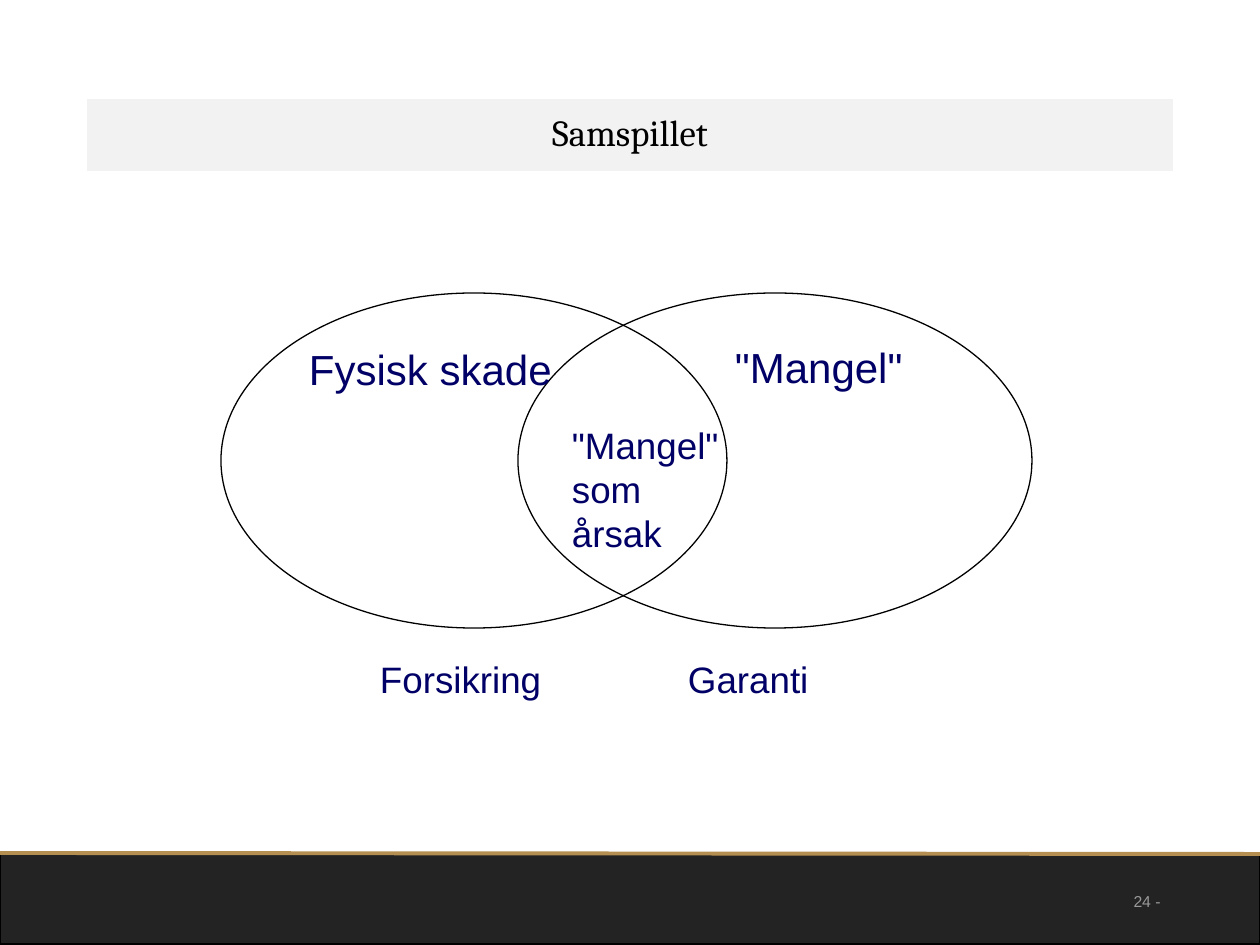
from pptx import Presentation
from pptx.dml.color import RGBColor
from pptx.enum.shapes import MSO_CONNECTOR as Connector, MSO_SHAPE as Shape
from pptx.enum.text import MSO_ANCHOR as Anchor, MSO_AUTO_SIZE as AutoSize, PP_ALIGN as Align
from pptx.util import Emu, Pt
from lxml.etree import SubElement
from pptx.oxml.ns import qn

PX = 7257.14  # EMU per px, 126 px to the inch

# Content: places are left, top, width, height in px
TITLE = ("Samspillet", (87, 99, 1086, 72))
PAGE_NUMBER = ("24 -", (890, 876, 283, 50))
FOOTER_BAND = (0, 853, 1260, 91)
FOOTER_RULE = (-1, 853, 1260, 854)  # from x, y to x, y
CIRCLES = [(221, 293, 506, 335), (518, 293, 514, 335)]
LABELS = [  # lines, size, place
    (["Forsikring"], 21, (371, 652, 181, 54)),
    (["Garanti"], 21, (679, 652, 141, 54)),
    (["Fysisk skade"], 24, (300, 339, 265, 60)),
    (['"Mangel"'], 24, (726, 337, 189, 111)),
    (['"Mangel"', "som", "årsak"], 21, (563, 418, 166, 144)),
]


def px(*lengths):
    return [Emu(round(length * PX)) for length in lengths]


def color(hex_string):
    return RGBColor.from_string(hex_string)


def write(paragraph, text, size, font, ink, align=Align.LEFT):
    paragraph.alignment = align
    run = paragraph.add_run()
    run.text = text
    run.font.size = Pt(size)
    run.font.name = font
    run.font.color.rgb = color(ink)


def draw(shapes, kind, place, line_width, fill=None):
    figure = shapes.add_shape(kind, *px(*place))
    figure.shadow.inherit = False
    if fill:
        figure.fill.solid()
        figure.fill.fore_color.rgb = color(fill)
    else:
        figure.fill.background()
    figure.line.color.rgb = color("000000")
    figure.line.width = Pt(line_width)


def main():
    deck = Presentation()
    deck.slide_width, deck.slide_height = px(1260, 945)
    slide = deck.slides.add_slide(deck.slide_layouts[5])
    shapes = slide.shapes

    # Footer band with its gold rule
    draw(shapes, Shape.RECTANGLE, FOOTER_BAND, 1, "232323")
    rule = shapes.add_connector(Connector.STRAIGHT, *px(*FOOTER_RULE))
    rule.line.color.rgb = color("B58F51")
    rule.line.width = Pt(2.25)
    SubElement(rule._element.spPr, qn("a:effectLst"))

    # Title
    heading, place = TITLE
    title = shapes.title
    title.left, title.top, title.width, title.height = px(*place)
    title.fill.solid()
    title.fill.fore_color.rgb = color("F2F2F2")
    title.text_frame.vertical_anchor = Anchor.MIDDLE
    title_line = title.text_frame.paragraphs[0]
    title_line.line_spacing = 0.9
    write(title_line, heading, 21, "Cambria", "000000", Align.CENTER)

    # Page number
    number, place = PAGE_NUMBER
    number_frame = shapes.add_textbox(*px(*place)).text_frame
    number_frame.word_wrap = True
    number_frame.vertical_anchor = Anchor.MIDDLE
    write(number_frame.paragraphs[0], number, 9, "Arial", "999999", Align.RIGHT)

    # Overlapping circles
    for place in CIRCLES:
        draw(shapes, Shape.OVAL, place, 0.75)

    # Labels
    for lines, size, place in LABELS:
        frame = shapes.add_textbox(*px(*place)).text_frame
        frame.word_wrap = False
        frame.auto_size = AutoSize.SHAPE_TO_FIT_TEXT
        frame.margin_left, frame.margin_right = px(9, 9)
        frame.margin_top, frame.margin_bottom = px(5, 5)
        for index, text in enumerate(lines):
            paragraph = frame.add_paragraph() if index else frame.paragraphs[0]
            write(paragraph, text, size, "Arial", "000066")

    deck.save("out.pptx")


if __name__ == "__main__":
    main()
